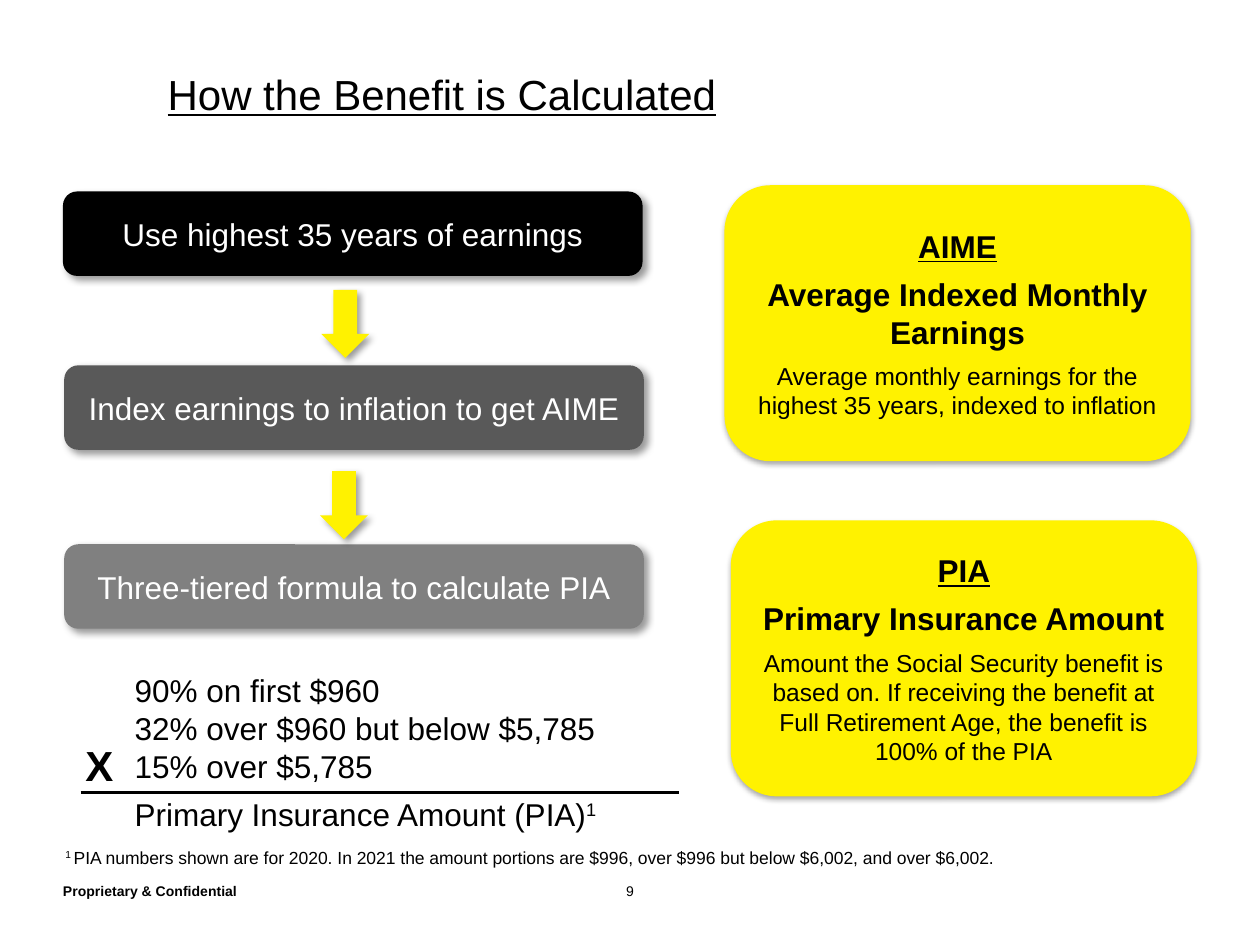
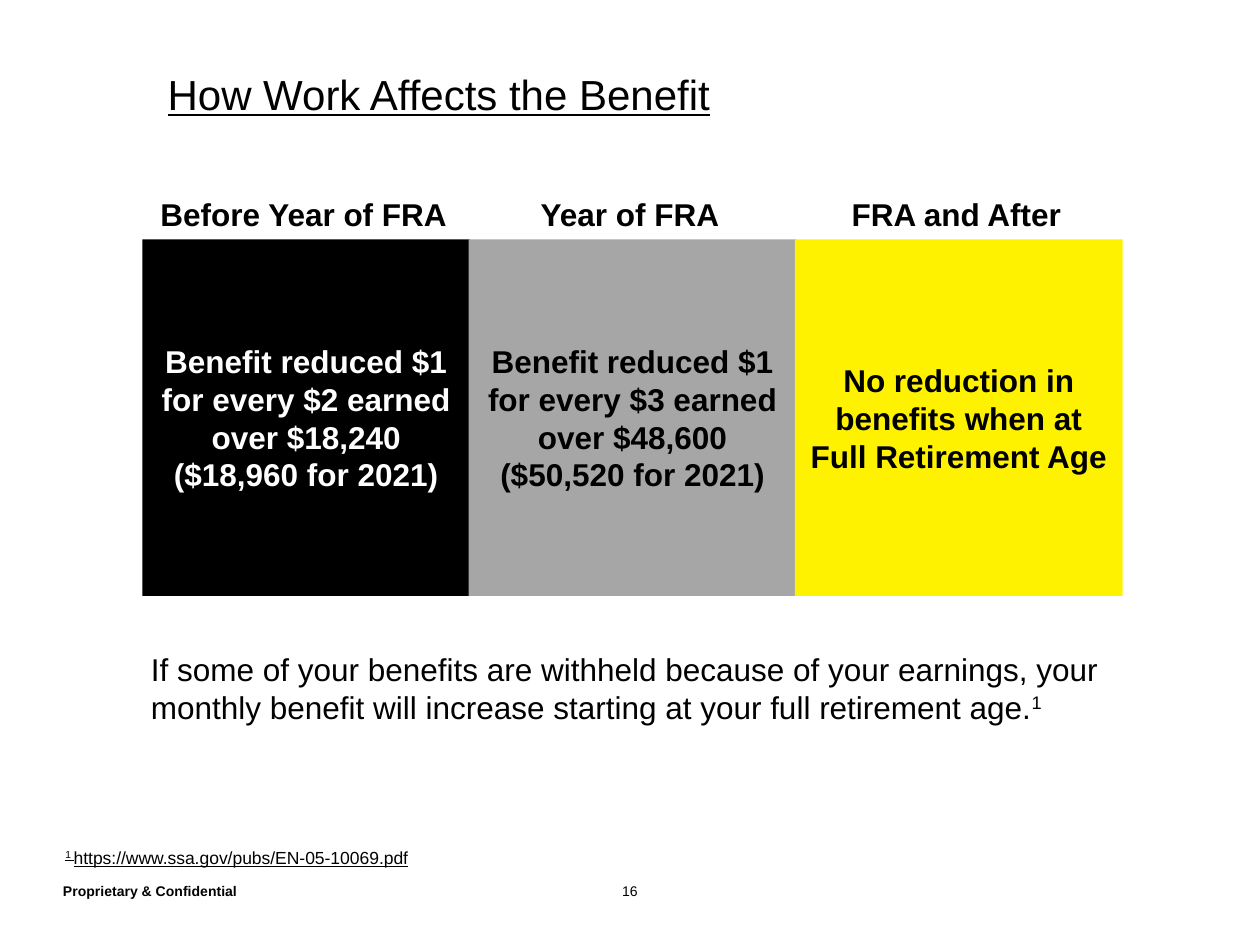
from pptx import Presentation
from pptx.dml.color import RGBColor
from pptx.enum.shapes import MSO_CONNECTOR, MSO_SHAPE
from pptx.enum.text import MSO_ANCHOR, PP_ALIGN
from pptx.oxml.ns import qn
from pptx.util import Inches, Pt
from lxml.etree import SubElement

FONT = "Arial"
COLORS = {
    "black": "000000",
    "white": "FFFFFF",
    "dark": "595959",
    "gray": "808080",
    "light": "A6A6A6",
    "yellow": "FFF200",
}
# Shadows: opacity %, blur pt, distance pt, angle
SLANT = (40, 4, 3, 45)
DROP = (35, 3.1, 1.8, 90)


def color(name):
    return RGBColor.from_string(COLORS[name])


def style(para, size, hue="black", bold=False, line=False, align=PP_ALIGN.LEFT):
    para.alignment = align
    font = para.font
    font.name, font.size = FONT, Pt(size)
    font.bold, font.underline = bold, line
    font.color.rgb = color(hue)


def raised(para, text):
    run = para.add_run()
    run.text = text
    run._r.get_or_add_rPr().set("baseline", "30000")


def add_text(slide, box, lines, size, wrap=True, **look):
    frame = slide.shapes.add_textbox(*map(Inches, box)).text_frame
    frame.word_wrap = wrap
    frame.text = "\n".join(lines)
    for para in frame.paragraphs:
        style(para, size, **look)
    return frame


def trim(frame):
    frame.margin_left = frame.margin_right = 0
    frame.margin_top = frame.margin_bottom = 0


def add_block(slide, kind, box, fill, shadow=None):
    shape = slide.shapes.add_shape(kind, *map(Inches, box))
    shape.fill.solid()
    shape.fill.fore_color.rgb = color(fill)
    shape.line.fill.background()
    shape.shadow.inherit = False
    if shadow:
        alpha, blur, dist, angle = shadow
        effects = shape._element.spPr.find(qn("a:effectLst"))
        outer = SubElement(effects, qn("a:outerShdw"), blurRad=str(Pt(blur)),
                           dist=str(Pt(dist)), dir=str(angle * 60000), rotWithShape="0")
        tint = SubElement(outer, qn("a:srgbClr"), val=COLORS["black"])
        SubElement(tint, qn("a:alpha"), val=str(alpha * 1000))
    frame = shape.text_frame
    frame.word_wrap = True
    frame.vertical_anchor = MSO_ANCHOR.MIDDLE
    return frame


def add_step(slide, left, top, fill, text):
    frame = add_block(slide, MSO_SHAPE.ROUNDED_RECTANGLE, (left, top, 4.6, 0.67), fill, SLANT)
    frame.text = text
    style(frame.paragraphs[0], 18, "white", align=PP_ALIGN.CENTER)


def add_card(slide, left, top, short, name, detail):
    frame = add_block(slide, MSO_SHAPE.ROUNDED_RECTANGLE, (left, top, 3.7, 2.19), "yellow", DROP)
    frame.text = "\n".join((short, name, detail))
    looks = ((18, True, True), (18, True, False), (14, False, False))
    for i, (para, (size, bold, line)) in enumerate(zip(frame.paragraphs, looks)):
        style(para, size, bold=bold, line=line, align=PP_ALIGN.CENTER)
        para.space_before = Pt(6 if i else 0)


def add_rule(slide, left, right, y):
    rule = slide.shapes.add_connector(MSO_CONNECTOR.STRAIGHT, *map(Inches, (left, y, right, y)))
    rule.line.color.rgb = color("black")
    rule.line.width = Pt(1.5)
    SubElement(rule._element.spPr, qn("a:effectLst"))


def add_note(slide, text, width, line=False):
    frame = add_text(slide, (0.42, 6.67, width, 0.27), [""], 10, line=line)
    para = frame.paragraphs[0]
    raised(para, "1 ")
    para.add_run().text = text


def add_page(deck, title, number):
    slide = deck.slides.add_slide(deck.slide_layouts[5])
    # Title
    head = slide.shapes.title
    head.left, head.top, head.width, head.height = map(Inches, (1.33, 0.5, 9, 0.99))
    frame = head.text_frame
    frame.text = title
    frame.vertical_anchor = MSO_ANCHOR.TOP
    trim(frame)
    style(frame.paragraphs[0], 24, line=True)
    frame.paragraphs[0].line_spacing = Pt(32)
    # Footer
    for box, text, look in (
        ((0.5, 7.01, 8.16, 0.13), "Proprietary & Confidential", {"bold": True}),
        ((4.74, 7.01, 0.52, 0.13), str(number), {"align": PP_ALIGN.CENTER}),
    ):
        foot = add_text(slide, box, [text], 8, **look)
        foot.vertical_anchor = MSO_ANCHOR.BOTTOM
        trim(foot)
    return slide


def add_method(deck):
    slide = add_page(deck, "How the Benefit is Calculated", 9)
    # Steps and arrows
    add_step(slide, 0.5, 1.52, "black", "Use highest 35 years of earnings")
    add_step(slide, 0.51, 2.9, "dark", "Index earnings to inflation to get AIME")
    add_step(slide, 0.51, 4.32, "gray", "Three-tiered formula to calculate PIA")
    for left, top in ((2.55, 2.3), (2.54, 3.74)):
        add_block(slide, MSO_SHAPE.DOWN_ARROW, (left, top, 0.38, 0.54), "yellow", SLANT)
    # Formula
    tiers = ["90% on first $960", "32% over $960 but below $5,785", "15% over $5,785"]
    add_text(slide, (0.97, 5.28, 4.67, 1.01), tiers, 18)
    add_text(slide, (0.58, 5.82, 0.43, 0.5), ["X"], 24, wrap=False, bold=True)
    add_rule(slide, 0.64, 5.39, 6.29)
    total = add_text(slide, (0.97, 6.26, 3.94, 0.4), ["Primary Insurance Amount (PIA)"],
                     18, wrap=False)
    raised(total.paragraphs[0], "1")
    # Terms
    add_card(slide, 5.75, 1.47, "AIME", "Average Indexed Monthly Earnings",
             "Average monthly earnings for the highest 35 years, indexed to inflation")
    add_card(slide, 5.8, 4.13, "PIA", "Primary Insurance Amount",
             "Amount the Social Security benefit is based on. If receiving the benefit at "
             "Full Retirement Age, the benefit is 100% of the PIA")
    add_note(slide, "PIA numbers shown are for 2020. In 2021 the amount portions are $996, "
             "over $996 but below $6,002, and over $6,002.", 8.25)


def add_work(deck):
    slide = add_page(deck, "How Work Affects the Benefit", 16)
    # Stages side by side
    stages = (
        ("Before Year of FRA", "black", "white",
         "Benefit reduced $1 for every $2 earned over $18,240 ($18,960 for 2021)"),
        ("Year of FRA", "light", "black",
         "Benefit reduced $1 for every $3 earned over $48,600 ($50,520 for 2021)"),
        ("FRA and After", "yellow", "black",
         "No reduction in benefits when at Full Retirement Age"),
    )
    for i, (label, fill, ink, effect) in enumerate(stages):
        left = 1.13 + 2.59 * i
        frame = add_block(slide, MSO_SHAPE.RECTANGLE, (left, 1.9, 2.6, 2.83), fill)
        frame.text = effect
        style(frame.paragraphs[0], 18, ink, bold=True, align=PP_ALIGN.CENTER)
        add_text(slide, (left, 1.5, 2.56, 0.4), [label], 18, bold=True, align=PP_ALIGN.CENTER)
    # Remark
    remark = add_text(slide, (1.1, 5.11, 7.8, 0.71), [
        "If some of your benefits are withheld because of your earnings, your monthly "
        "benefit will increase starting at your full retirement age."], 18)
    raised(remark.paragraphs[0], "1")
    add_note(slide, "https://www.ssa.gov/pubs/EN-05-10069.pdf", 2.96, line=True)


def main():
    deck = Presentation()
    deck.slide_width, deck.slide_height = Inches(10), Inches(7.5)
    add_method(deck)
    add_work(deck)
    deck.save("out.pptx")


if __name__ == "__main__":
    main()
